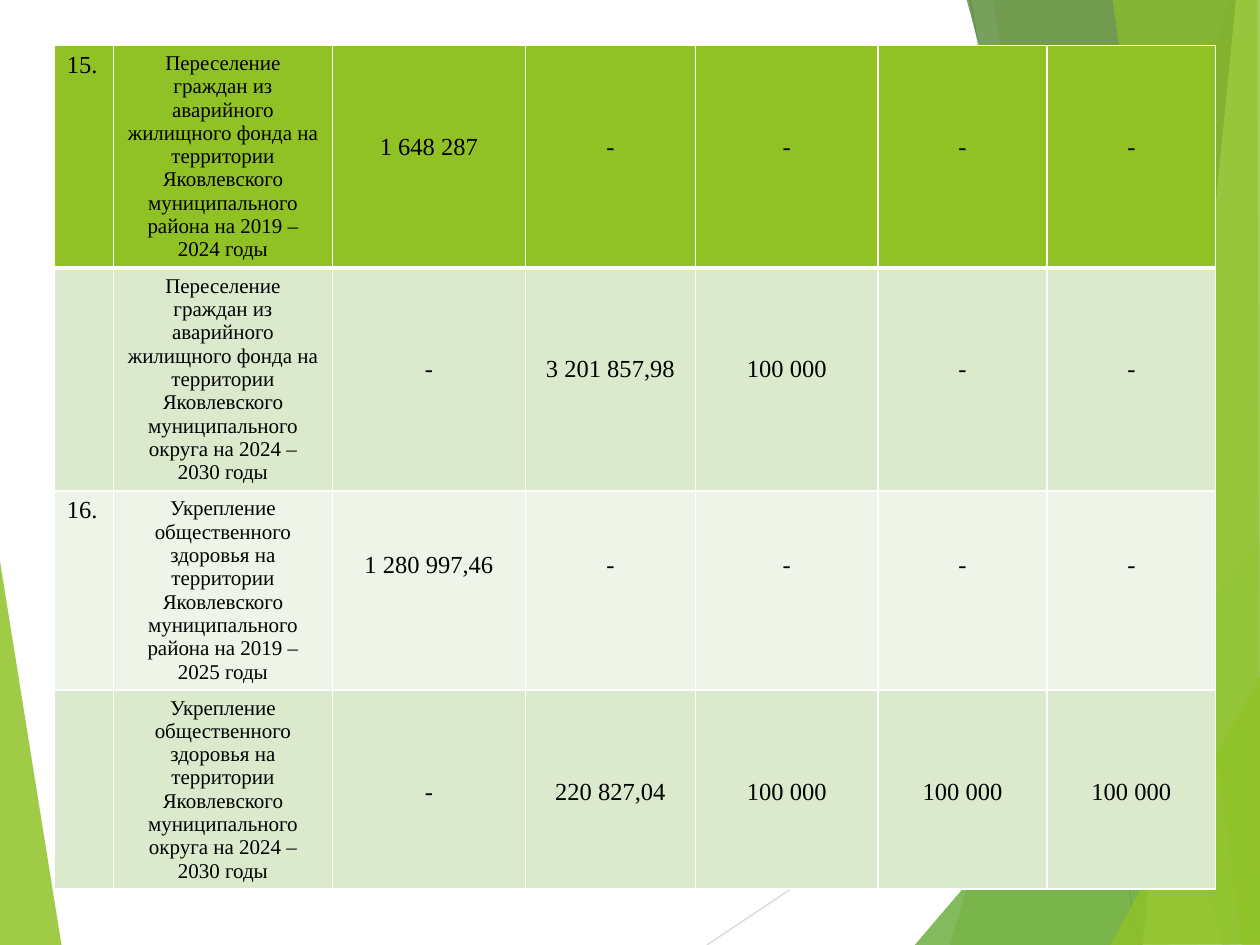
from lxml.etree import SubElement
from pptx import Presentation
from pptx.dml.color import RGBColor
from pptx.enum.shapes import MSO_CONNECTOR
from pptx.enum.text import MSO_ANCHOR, PP_ALIGN
from pptx.oxml.ns import qn
from pptx.util import Inches, Pt

THEME = {
    "font": "Times New Roman",
    "text": "000000",
    "name_size": 12,
    "value_size": 14,
    "border": "FFFFFF",
    "row_fills": ["90C226", "DBE9CD", "EEF4E8", "DBE9CD"],
    "lime": "90C226",
    "green": "54A021",
    "dark_green": "3F7819",
    "pale_lime": "C0E474",
    "light_gray": "D9D9D9",
    "gray": "BFBFBF",
}

PROGRAMMES = [
    ("15.", "Переселение граждан из аварийного жилищного фонда на территории "
     "Яковлевского муниципального района на 2019 – 2024 годы",
     "1 648 287", "-", "-", "-", "-"),
    ("", "Переселение граждан из аварийного жилищного фонда на территории "
     "Яковлевского муниципального округа на 2024 – 2030 годы",
     "-", "3 201 857,98", "100 000", "-", "-"),
    ("16.", "Укрепление общественного здоровья на территории "
     "Яковлевского муниципального района на 2019 – 2025 годы",
     "1 280 997,46", "-", "-", "-", "-"),
    ("", "Укрепление общественного здоровья на территории "
     "Яковлевского муниципального округа на 2024 – 2030 годы",
     "-", "220 827,04", "100 000", "100 000", "100 000"),
]
TABLE_LEFT, TABLE_TOP = 0.43, 0.36
COLUMN_WIDTHS = [0.47, 1.74, 1.53, 1.35, 1.45, 1.34, 1.34]
ROW_HEIGHTS = [1.76, 1.77, 1.58, 1.58]
VALUE_TOP_MARGINS = [0.7, 0.7, 0.48, 0.7]

# Colour key, opacity in percent, corner points
LEFT_FACET = ("lime", 85, [(-0.01, 4.39), (0.49, 7.51), (-0.01, 7.5)])
RIGHT_FACETS = [
    ("lime", 30, [(9.75, 0), (7.54, 7.5), (10.02, 7.51), (10.01, 0.01)]),
    ("lime", 20, [(7.88, -0.01), (9.19, 7.5), (10.01, 7.5), (10.01, -0.01)]),
    ("green", 72, [(7.26, 7.5), (10, 4.29), (10.01, 7.5)]),
    ("dark_green", 70, [(7.67, -0.01), (9.7, 7.5), (10.01, 7.49), (10.01, -0.01)]),
    ("pale_lime", 70, [(9.81, -0.01), (9.07, 7.5), (10.01, 7.5), (10, -0.01)]),
    ("lime", 65, [(8.83, -0.01), (9.86, 7.5), (10, 7.5), (9.98, -0.01)]),
    ("lime", 80, [(8.81, 7.5), (10.01, 5.35), (10.01, 7.49)]),
]
# Start, end, colour key
THIN_LINES = [
    ((5.61, 7.5), (10.01, 4.57), "light_gray"),
    ((7.7, 0), (9.04, 7.5), "gray"),
]


def add_facet(slide, color_key, opacity, points):
    """Draw one translucent polygon of the background."""
    start, *others = [(Inches(x), Inches(y)) for x, y in points]
    builder = slide.shapes.build_freeform(*start)
    builder.add_line_segments(others, close=True)
    shape = builder.convert_to_shape()
    shape.shadow.inherit = False
    shape.line.fill.background()
    shape.fill.solid()
    shape.fill.fore_color.rgb = RGBColor.from_string(THEME[color_key])
    color = shape._element.spPr.find(qn("a:solidFill"))[0]
    SubElement(color, qn("a:alpha"), val=str(opacity * 1000))


def add_thin_line(slide, start, end, color_key):
    connector = slide.shapes.add_connector(
        MSO_CONNECTOR.STRAIGHT, *(Inches(value) for value in start + end))
    connector.line.width = Pt(0.75)
    connector.line.color.rgb = RGBColor.from_string(THEME[color_key])
    SubElement(connector._element.spPr, qn("a:effectLst"))


def add_borders(cell, top_width, bottom_width):
    properties = cell._tc.get_or_add_tcPr()
    widths = {"lnL": 1, "lnR": 1, "lnT": top_width, "lnB": bottom_width}
    for side, width in widths.items():
        line = SubElement(properties, qn(f"a:{side}"), w=str(Pt(width)))
        fill = SubElement(line, qn("a:solidFill"))
        SubElement(fill, qn("a:srgbClr"), val=THEME["border"])


def fill_cell(cell, row, column, text):
    add_borders(cell, 3 if row == 1 else 1, 3 if row == 0 else 1)
    cell.fill.solid()
    cell.fill.fore_color.rgb = RGBColor.from_string(THEME["row_fills"][row])
    is_name = column == 1
    cell.vertical_anchor = MSO_ANCHOR.MIDDLE if is_name else MSO_ANCHOR.TOP
    if column > 1:
        cell.margin_top = Inches(VALUE_TOP_MARGINS[row])
    if not text:
        return
    cell.text = text
    paragraph = cell.text_frame.paragraphs[0]
    paragraph.alignment = PP_ALIGN.CENTER if column else PP_ALIGN.LEFT
    font = paragraph.runs[0].font
    font_format = {
        "name": THEME["font"],
        "size": Pt(THEME["name_size" if is_name else "value_size"]),
        "bold": False,
    }
    for attribute, value in font_format.items():
        setattr(font, attribute, value)
    font.color.rgb = RGBColor.from_string(THEME["text"])


def add_programme_table(slide):
    table = slide.shapes.add_table(
        len(PROGRAMMES), len(COLUMN_WIDTHS), Inches(TABLE_LEFT), Inches(TABLE_TOP),
        Inches(sum(COLUMN_WIDTHS)), Inches(sum(ROW_HEIGHTS))).table
    for column, width in zip(table.columns, COLUMN_WIDTHS):
        column.width = Inches(width)
    for row, height in zip(table.rows, ROW_HEIGHTS):
        row.height = Inches(height)
    for row, programme in enumerate(PROGRAMMES):
        for column, text in enumerate(programme):
            fill_cell(table.cell(row, column), row, column, text)


def main():
    presentation = Presentation()
    presentation.slide_width = Inches(10)
    presentation.slide_height = Inches(7.5)
    slide = presentation.slides.add_slide(presentation.slide_layouts[6])
    add_facet(slide, *LEFT_FACET)
    for thin_line in THIN_LINES:
        add_thin_line(slide, *thin_line)
    for facet in RIGHT_FACETS:
        add_facet(slide, *facet)
    add_programme_table(slide)
    presentation.save("out.pptx")


if __name__ == "__main__":
    main()
